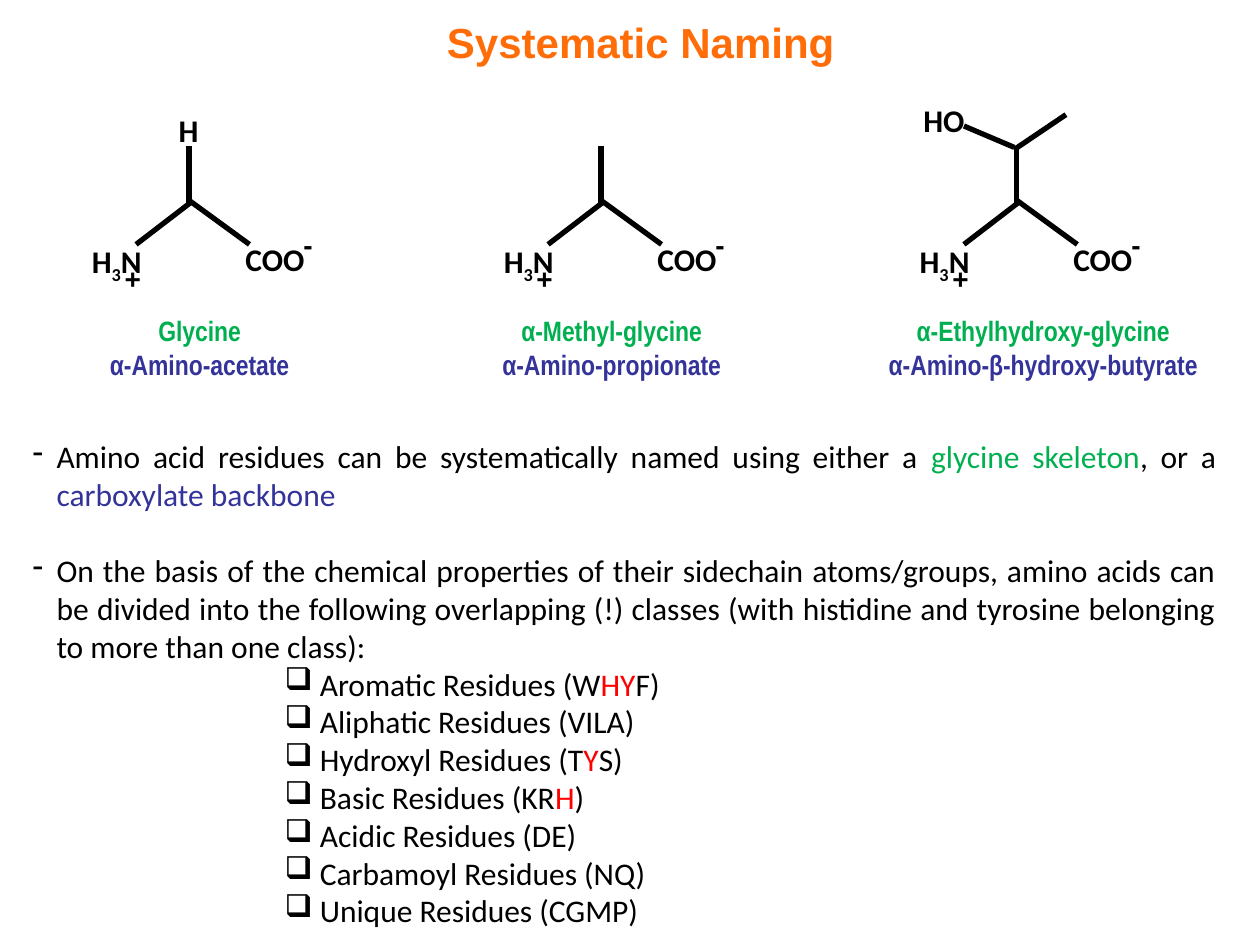
from typing import NamedTuple

from lxml import etree
from pptx import Presentation
from pptx.dml.color import RGBColor
from pptx.enum.shapes import MSO_CONNECTOR, MSO_SHAPE
from pptx.enum.text import MSO_ANCHOR, MSO_AUTO_SIZE, PP_ALIGN
from pptx.oxml.ns import qn
from pptx.shapes.shapetree import GroupShapes
from pptx.text.text import TextFrame, _Paragraph
from pptx.util import Inches, Pt

LEFT, MID, FULL = PP_ALIGN.LEFT, PP_ALIGN.CENTER, PP_ALIGN.JUSTIFY
TOP = MSO_ANCHOR.TOP
GROW = MSO_AUTO_SIZE.SHAPE_TO_FIT_TEXT
LINE = MSO_CONNECTOR.STRAIGHT
RECT = MSO_SHAPE.RECTANGLE

HUES = {
    "black": "000000",
    "white": "FFFFFF",
    "orange": "FF6D09",
    "green": "00B050",
    "blue": "333399",
    "red": "FF0000",
}


class Run(NamedTuple):
    text: str
    hue: str = "black"
    base: int = 0


class Font(NamedTuple):
    name: str
    size: int
    bold: bool = True


class Tag(NamedTuple):
    runs: list[Run]
    font: Font
    left: float
    top: float
    width: float
    height: float
    solid: bool = False


class Bond(NamedTuple):
    x1: float
    y1: float
    x2: float
    y2: float


class Acid(NamedTuple):
    x: float
    names: tuple[str, str]
    left: float
    width: float
    bonds: list[Bond]
    tags: list[Tag]


class Point(NamedTuple):
    runs: list[Run]
    mark: str
    level: int
    margin: float
    hang: float
    gap: int = 0


HEAD = Font("Arial", 24)
ATOM = Font("Calibri", 18)
SIGN = Font("Arial", 16)
NAME = Font("Arial Narrow", 16)
BODY = Font("Calibri", 18, False)

CORE_BONDS = [
    Bond(0, 1.16, 0, 1.62),
    Bond(0, 1.59, 0.48, 1.94),
    Bond(0.01, 1.61, -0.42, 1.94),
]
CORE_TAGS = [
    Tag([Run("H"), Run("3", base=-25000), Run("N")], ATOM, -0.87, 1.87, 0.61, 0.4, True),
    Tag([Run("COO")], ATOM, 0.35, 1.86, 0.67, 0.4, True),
    Tag([Run("+")], SIGN, -0.61, 2.03, 0.33, 0.37),
    Tag([Run("-")], SIGN, 0.81, 1.76, 0.28, 0.37),
]
ACIDS = [
    Acid(1.5, ("Glycine", "α-Amino-acetate"), 0.75, 1.67,
         [], [Tag([Run("H")], ATOM, -0.18, 0.83, 0.36, 0.4)]),
    Acid(4.77, ("α-Methyl-glycine", "α-Amino-propionate"), 3.83, 2.05, [], []),
    Acid(8.07, ("α-Ethylhydroxy-glycine", "α-Amino-β-hydroxy-butyrate"), 6.92, 2.72,
         [Bond(-0.02, 1.17, -0.42, 1), Bond(0.39, 0.91, -0.01, 1.18)],
         [Tag([Run("HO")], ATOM, -0.84, 0.75, 0.53, 0.4)]),
]

GROUPS = [
    [Run("Aromatic Residues (W"), Run("HY", "red"), Run("F)")],
    [Run("Aliphatic Residues (VILA)")],
    [Run("Hydroxyl Residues (T"), Run("Y", "red"), Run("S)")],
    [Run("Basic Residues (KR"), Run("H", "red"), Run(")")],
    [Run("Acidic Residues (DE)")],
    [Run("Carbamoyl Residues (NQ)")],
    [Run("Unique Residues (CGMP)")],
]
POINTS = [
    Point([Run("Amino acid residues can be systematically named using either a "),
           Run("glycine skeleton", "green"), Run(", or a "),
           Run("carboxylate backbone", "blue")], "-", 0, 0.19, 0.19),
    Point([Run("On the basis of the chemical properties of their sidechain atoms/groups, "
               "amino acids can be divided into the following overlapping (!) classes "
               "(with histidine and tyrosine belonging to more than one class):")],
          "-", 0, 0.19, 0.19, 22),
    *(Point(runs, "❑", 2, 2.28, 0.28) for runs in GROUPS),
]


def tint(hue: str) -> RGBColor:
    return RGBColor.from_string(HUES[hue])


def write(para: _Paragraph, runs: list[Run], font: Font, align: PP_ALIGN) -> None:
    para.alignment = align
    for part in runs:
        run = para.add_run()
        run.text = part.text
        run.font.name = font.name
        run.font.size = Pt(font.size)
        run.font.bold = font.bold
        run.font.color.rgb = tint(part.hue)
        if part.base:
            run.font._element.set("baseline", str(part.base))


def fill_frame(frame: TextFrame, rows: list[list[Run]], font: Font,
               align: PP_ALIGN, wrap: bool = False) -> None:
    frame.word_wrap = wrap
    frame.auto_size = GROW
    frame.vertical_anchor = TOP
    for i, runs in enumerate(rows):
        para = frame.add_paragraph() if i else frame.paragraphs[0]
        write(para, runs, font, align)


def draw_bond(shapes: GroupShapes, x: float, bond: Bond) -> None:
    line = shapes.add_connector(LINE, Inches(x + bond.x1), Inches(bond.y1),
                                Inches(x + bond.x2), Inches(bond.y2))
    line.line.color.rgb = tint("black")
    line.line.width = Pt(3)
    etree.SubElement(line._element.spPr, qn("a:effectLst"))


def draw_tag(shapes: GroupShapes, x: float, tag: Tag) -> None:
    box = (Inches(x + tag.left), Inches(tag.top), Inches(tag.width), Inches(tag.height))
    if tag.solid:
        shape = shapes.add_shape(RECT, *box)
        shape.shadow.inherit = False
        shape.fill.solid()
        shape.fill.fore_color.rgb = tint("white")
        shape.line.fill.background()
    else:
        shape = shapes.add_textbox(*box)
    fill_frame(shape.text_frame, [tag.runs], tag.font, LEFT)


def draw_acid(shapes: GroupShapes, acid: Acid) -> None:
    label = shapes.add_textbox(Inches(acid.left), Inches(2.44), Inches(acid.width), Inches(0.64))
    rows = [[Run(name, hue)] for name, hue in zip(acid.names, ("green", "blue"))]
    fill_frame(label.text_frame, rows, NAME, MID)
    for tag in CORE_TAGS + acid.tags:
        draw_tag(shapes, acid.x, tag)
    for bond in CORE_BONDS + acid.bonds:
        draw_bond(shapes, acid.x, bond)


def set_mark(para: _Paragraph, point: Point) -> None:
    para.level = point.level
    para.space_before = Pt(point.gap)
    props = para._p.get_or_add_pPr()
    props.set("marL", str(Inches(point.margin)))
    props.set("indent", str(-Inches(point.hang)))
    etree.SubElement(props, qn("a:buChar")).set("char", point.mark)


def main() -> None:
    deck = Presentation()
    deck.slide_width, deck.slide_height = Inches(10), Inches(7.5)
    shapes = deck.slides.add_slide(deck.slide_layouts[6]).shapes

    title = shapes.add_textbox(Inches(2), Inches(0.08), Inches(6.17), Inches(0.5))
    fill_frame(title.text_frame, [[Run("Systematic Naming", "orange")]], HEAD, MID, True)

    body = shapes.add_textbox(Inches(0.16), Inches(3.42), Inches(9.59), Inches(4.04))
    fill_frame(body.text_frame, [point.runs for point in POINTS], BODY, FULL, True)
    for para, point in zip(body.text_frame.paragraphs, POINTS):
        set_mark(para, point)

    for acid in ACIDS:
        draw_acid(shapes.add_group_shape().shapes, acid)

    deck.save("out.pptx")


if __name__ == "__main__":
    main()
